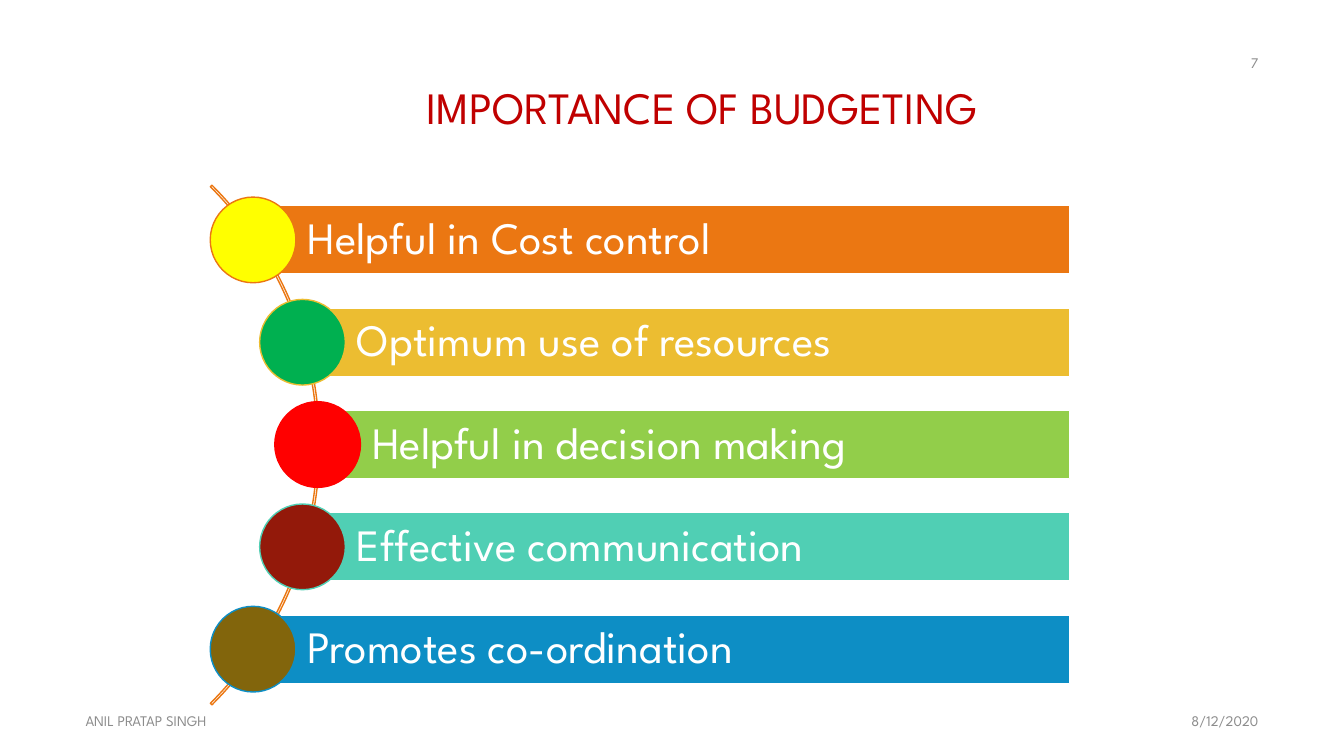
from pptx import Presentation
from pptx.dml.color import RGBColor
from pptx.enum.shapes import MSO_SHAPE
from pptx.enum.text import MSO_ANCHOR, MSO_AUTO_SIZE, PP_ALIGN
from pptx.util import Inches, Pt

RECT, OVAL, ARC = MSO_SHAPE.RECTANGLE, MSO_SHAPE.OVAL, MSO_SHAPE.BLOCK_ARC
TOP, MIDDLE = MSO_ANCHOR.TOP, MSO_ANCHOR.MIDDLE
LEFT, RIGHT = PP_ALIGN.LEFT, PP_ALIGN.RIGHT
FIXED = MSO_AUTO_SIZE.NONE

FONT = "League Spartan"
COLORS = {
    "white": "FFFFFF", "title": "C00000", "gray": "8C8C8C",
    "orange": "EB7712", "gold": "ECBD31", "lime": "92CE4A",
    "teal": "50CFB4", "blue": "0D8EC5", "yellow": "FFFF00",
    "green": "00B050", "red": "FF0000", "maroon": "93190A",
    "olive": "82650C",
}
# label, bar left edge, bar fill, dot fill, dot line
ITEMS = [
    ("Helpful in Cost control", 2.51, "orange", "yellow", "orange"),
    ("Optimum use of resources", 3, "gold", "green", "gold"),
    ("Helpful in decision making", 3.15, "lime", "red", "red"),
    ("Effective communication", 3, "teal", "maroon", "teal"),
    ("Promotes co-ordination", 2.51, "blue", "olive", "blue"),
]
FIRST, STEP = 2.38, 1.015   # middle of the first row, distance between rows
END, BAR, DOT = 10.61, 0.68, 0.85   # right edge, bar height, dot size


def color(name):
    return RGBColor.from_string(COLORS[name])


def add_run(para, text, size, tint):
    run = para.add_run()
    run.text = text
    run.font.name = FONT
    run.font.size = Pt(size)
    run.font.color.rgb = color(tint)


def add_form(slide, kind, box, fill, line):
    """Add a preset shape; a fill of None leaves it empty."""
    form = slide.shapes.add_shape(kind, *map(Inches, box))
    form.shadow.inherit = False
    if fill:
        form.fill.solid()
        form.fill.fore_color.rgb = color(fill)
    else:
        form.fill.background()
    form.line.color.rgb = color(line)
    form.line.width = Pt(1)
    return form


def add_arc(slide):
    arc = add_form(slide, ARC, (-4.12, 0.77, 7.29, 7.29), None, "orange")
    for index, value in enumerate((189, 27, 0.003)):
        arc.adjustments[index] = value


def add_item(slide, mid, label, left, fill, dot, line):
    """Add a labelled bar with a dot centred on its left edge."""
    box = (left, mid - BAR / 2, END - left, BAR)
    bar = add_form(slide, RECT, box, fill, "white")
    frame = bar.text_frame
    frame.word_wrap = True
    frame.vertical_anchor = MIDDLE
    frame.margin_left = Inches(0.54)
    frame.margin_right = frame.margin_top = frame.margin_bottom = Inches(0.09)
    para = frame.paragraphs[0]
    para.alignment = LEFT
    para.line_spacing = 0.9
    add_run(para, label, 32, "white")
    add_form(slide, OVAL, (left - DOT / 2, mid - DOT / 2, DOT, DOT), dot, line)


def set_title(slide, text):
    title = slide.shapes.title
    title.left, title.top = Inches(4.13), Inches(0.74)
    title.width, title.height = Inches(6.79), Inches(0.64)
    frame = title.text_frame
    frame.auto_size = FIXED
    frame.vertical_anchor = TOP
    para = frame.paragraphs[0]
    para.alignment = LEFT
    add_run(para, text, 32, "title")


def add_note(slide, text, box, align):
    """Add a small gray line at the edge of the slide."""
    frame = slide.shapes.add_textbox(*map(Inches, box)).text_frame
    frame.word_wrap = True
    frame.vertical_anchor = MIDDLE
    para = frame.paragraphs[0]
    para.alignment = align
    add_run(para, text, 10.5, "gray")


def main():
    deck = Presentation()
    deck.slide_width, deck.slide_height = Inches(13.33), Inches(7.5)
    slide = deck.slides.add_slide(deck.slide_layouts[5])
    set_title(slide, "IMPORTANCE OF BUDGETING")
    add_arc(slide)
    for row, item in enumerate(ITEMS):
        add_item(slide, FIRST + row * STEP, *item)
    add_note(slide, "8/12/2020", (9.4, 6.95, 3.18, 0.4), RIGHT)
    add_note(slide, "ANIL PRATAP SINGH", (0.75, 6.95, 8.5, 0.4), LEFT)
    add_note(slide, "7", (9.58, 0.42, 3, 0.4), RIGHT)
    deck.save("out.pptx")


if __name__ == "__main__":
    main()
